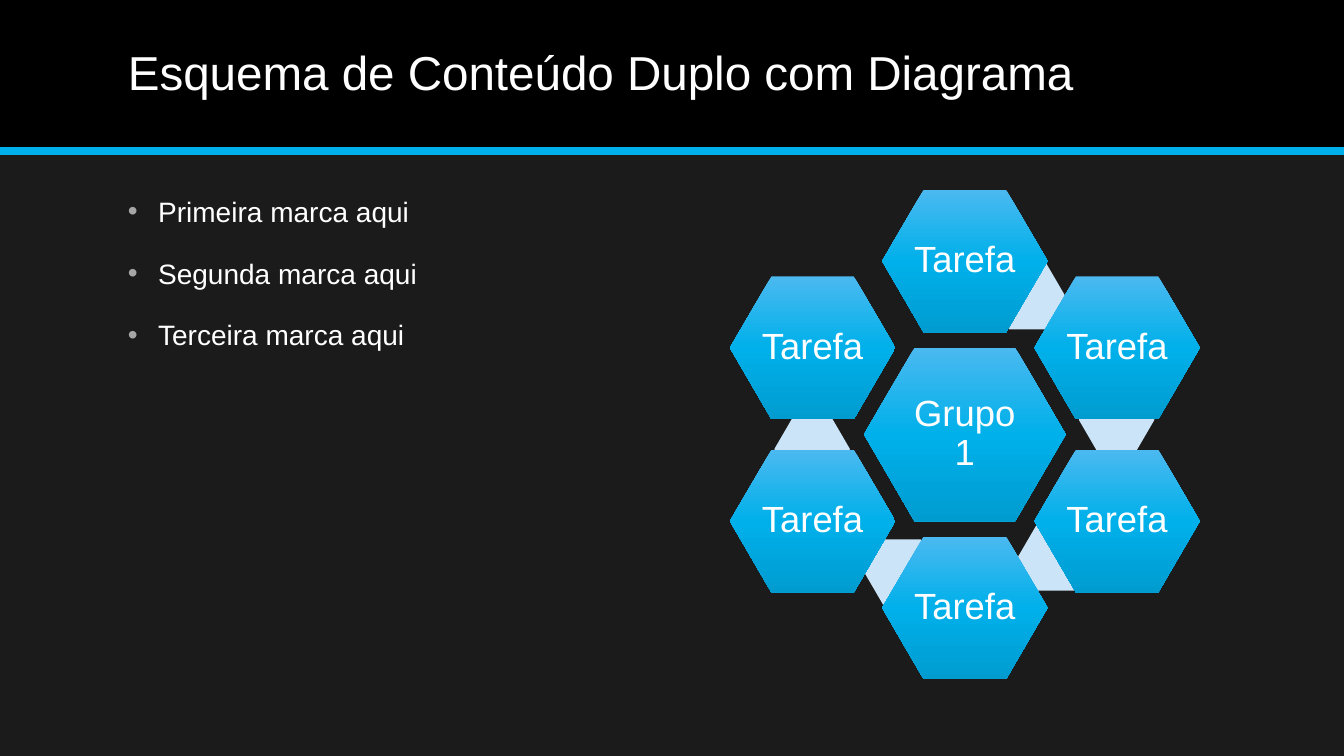
from lxml import etree
from pptx import Presentation
from pptx.dml.color import RGBColor
from pptx.enum.shapes import MSO_CONNECTOR, MSO_SHAPE
from pptx.enum.text import MSO_ANCHOR, PP_ALIGN
from pptx.oxml import parse_xml
from pptx.oxml.ns import nsdecls, qn
from pptx.util import Inches, Pt

COLORS = {
    "background": "1B1B1B", "band": "000000", "accent": "00B0EA",
    "light": "4BB9F0", "dark": "009CD0", "link": "CCE4F7",
    "text": "FFFFFF", "bullet": "A6A6A6",
}


def add_run(p, text, size):
    r = p.add_run()
    r.text = text
    r.font.name = "Arial"
    r.font.size = Pt(size)
    r.font.color.rgb = RGBColor.from_string(COLORS["text"])


def add_hexagon(left, top, width, height, text=None):
    sp = s.shapes.add_shape(MSO_SHAPE.HEXAGON, Inches(left), Inches(top),
                            Inches(width), Inches(height))
    sp.adjustments[0] = 0.29
    sp.adjustments[1] = 1.15
    sp.shadow.inherit = False
    sp.line.fill.background()
    if text is None:
        sp.fill.solid()
        sp.fill.fore_color.rgb = RGBColor.from_string(COLORS["link"])
        return
    # Vertical three-stop gradient
    sp.fill.gradient()
    sp.fill.gradient_angle = 270
    stops = sp.element.spPr.find(qn("a:gradFill")).find(qn("a:gsLst"))
    for stop in list(stops):
        stops.remove(stop)
    for pos, name in ((0, "light"), (50000, "accent"), (100000, "dark")):
        stops.append(parse_xml(
            f'<a:gs {nsdecls("a")} pos="{pos}"><a:srgbClr val="{COLORS[name]}"/></a:gs>'))
    tf = sp.text_frame
    tf.word_wrap = True
    tf.vertical_anchor = MSO_ANCHOR.MIDDLE
    tf.margin_left = tf.margin_right = tf.margin_top = tf.margin_bottom = Inches(0.04)
    p = tf.paragraphs[0]
    p.alignment = PP_ALIGN.CENTER
    p.line_spacing = 0.9
    add_run(p, text, 26)


prs = Presentation()
prs.slide_width, prs.slide_height = Inches(13.33), Inches(7.5)
s = prs.slides.add_slide(prs.slide_layouts[6])
s.background.fill.solid()
s.background.fill.fore_color.rgb = RGBColor.from_string(COLORS["background"])

# Title band and rule
band = s.shapes.add_shape(MSO_SHAPE.RECTANGLE, 0, 0, prs.slide_width, Inches(1.5))
band.shadow.inherit = False
band.fill.solid()
band.fill.fore_color.rgb = RGBColor.from_string(COLORS["band"])
band.line.fill.background()
rule = s.shapes.add_connector(MSO_CONNECTOR.STRAIGHT, 0, Inches(1.5),
                              prs.slide_width, Inches(1.5))
rule.line.color.rgb = RGBColor.from_string(COLORS["accent"])
rule.line.width = Pt(6)
etree.SubElement(rule.element.spPr, qn("a:effectLst"))

# Title
tf = s.shapes.add_textbox(Inches(1.17), Inches(0.14), Inches(11), Inches(1.2)).text_frame
tf.word_wrap = True
tf.vertical_anchor = MSO_ANCHOR.MIDDLE
p = tf.paragraphs[0]
p.line_spacing = 0.9
add_run(p, "Esquema de Conteúdo Duplo com Diagrama", 34)

# Bullets
tf = s.shapes.add_textbox(Inches(1.17), Inches(1.88), Inches(5.2), Inches(4.88)).text_frame
tf.word_wrap = True
for i, ordinal in enumerate(("Primeira", "Segunda", "Terceira")):
    p = tf.add_paragraph() if i else tf.paragraphs[0]
    p.space_before = Pt(20)
    pPr = p._p.get_or_add_pPr()
    pPr.set("marL", str(Inches(0.3)))
    pPr.set("indent", str(-Inches(0.3)))
    pPr.append(parse_xml(
        f'<a:buClr {nsdecls("a")}><a:srgbClr val="{COLORS["bullet"]}"/></a:buClr>'))
    pPr.append(parse_xml(f'<a:buFont {nsdecls("a")} typeface="Arial"/>'))
    pPr.append(parse_xml(f'<a:buChar {nsdecls("a")} char="•"/>'))
    add_run(p, f"{ordinal} marca aqui", 20)

# Hexagon ring: clockwise from the top, each task preceded by its link piece
CENTER_X, CENTER_Y = 9.57, 4.31
GROUP_W, GROUP_H = 2, 1.73
TASK_W, TASK_H = 1.64, 1.42
STEP_X, STEP_Y = 1.51, 0.86
ring = [  # column, row, link position
    (0, -2, (9.82, 2.62)),
    (1, -1, (10.7, 3.84)),
    (1, 1, (10.09, 5.21)),
    (0, 2, (8.57, 5.35)),
    (-1, 1, (7.68, 4.13)),
    (-1, -1, None),
]
add_hexagon(CENTER_X - GROUP_W / 2, CENTER_Y - GROUP_H / 2, GROUP_W, GROUP_H, "Grupo 1")
for col, row, link in ring:
    if link:
        add_hexagon(*link, 0.75, 0.65)
    add_hexagon(CENTER_X + col * STEP_X - TASK_W / 2,
                CENTER_Y + row * STEP_Y - TASK_H / 2,
                TASK_W, TASK_H, "Tarefa")

prs.save("out.pptx")
